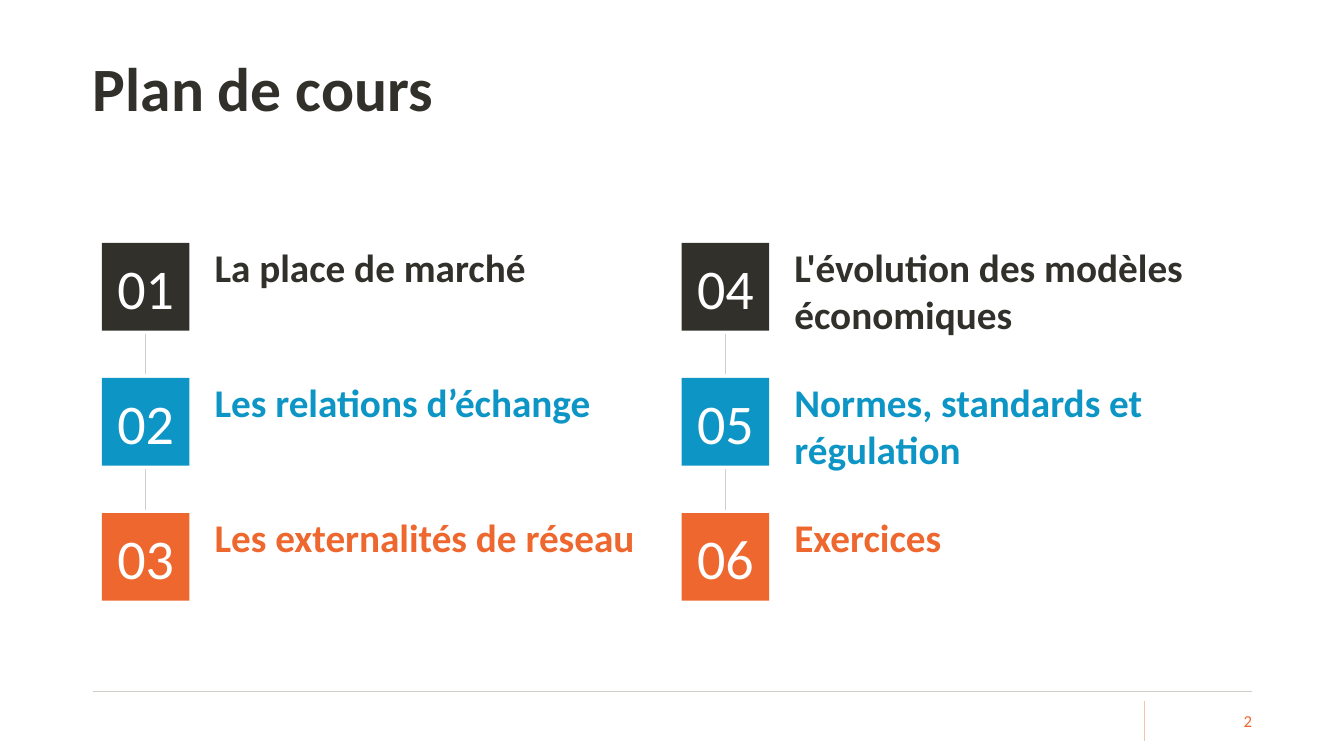
from lxml import etree
from pptx import Presentation
from pptx.dml.color import RGBColor
from pptx.enum.shapes import MSO_CONNECTOR, MSO_SHAPE
from pptx.enum.text import MSO_ANCHOR as Anchor, MSO_AUTO_SIZE as AutoSize, PP_ALIGN as Align
from pptx.oxml.ns import qn
from pptx.util import Inches, Pt

DARK = RGBColor(0x31, 0x30, 0x2B)
BLUE = RGBColor(0x0D, 0x96, 0xC5)
ORANGE = RGBColor(0xEE, 0x67, 0x2F)
WHITE = RGBColor(0xFF, 0xFF, 0xFF)
LINK_GREY = RGBColor(0xD0, 0xCE, 0xCE)
RULE_GREY = RGBColor(0xCE, 0xCD, 0xC7)
RULE_PEACH = RGBColor(0xF8, 0xC2, 0xAC)

ROW_COLOURS = [DARK, BLUE, ORANGE]
COLUMNS = [
    ["La place de marché", "Les relations d’échange", "Les externalités de réseau"],
    ["L'évolution des modèles économiques", "Normes, standards et régulation", "Exercices"],
]
COLUMN_LEFT, COLUMN_TOP = 1.01, 2.41
COLUMN_STEP, ROW_STEP = 5.75, 1.34
TILE = 0.87
LINK_GAP = 0.035
LABEL_OFFSET, LABEL_WIDTH, LABEL_LINE = 1.02, 4.61, 0.47


def write_text(shape, text, size, colour, bold=False, align=Align.LEFT,
               anchor=Anchor.TOP, margins=(0.1, 0.05, 0.1, 0.05), auto_size=AutoSize.NONE):
    """Fill a shape with one paragraph; margins are left, top, right, bottom in inches."""
    frame = shape.text_frame
    left, top, right, bottom = map(Inches, margins)
    frame_format = {
        "word_wrap": True, "auto_size": auto_size, "vertical_anchor": anchor,
        "margin_left": left, "margin_top": top,
        "margin_right": right, "margin_bottom": bottom,
    }
    for name, value in frame_format.items():
        setattr(frame, name, value)
    para = frame.paragraphs[0]
    para.alignment = align
    span = para.add_run()
    span.text = text
    for name, value in {"name": "Calibri", "size": Pt(size), "bold": bold}.items():
        setattr(span.font, name, value)
    span.font.color.rgb = colour
    return para


def add_line(slide, x1, y1, x2, y2, colour):
    line = slide.shapes.add_connector(MSO_CONNECTOR.STRAIGHT, *map(Inches, (x1, y1, x2, y2)))
    line.line.color.rgb = colour
    line.line.width = Pt(0.5)
    etree.SubElement(line._element.spPr, qn("a:effectLst"))


def add_title(slide, text, box):
    title = slide.shapes.title
    for name, value in zip(("left", "top", "width", "height"), box):
        setattr(title, name, Inches(value))
    para = write_text(title, text, 44, DARK, bold=True, anchor=Anchor.MIDDLE,
                      margins=(0, 0.05, 0.1, 0.05))
    para.line_spacing = 0.9


def add_topic(slide, left, top, number, text, colour):
    """Place a numbered tile with its label to the right."""
    label = slide.shapes.add_textbox(*map(Inches, (left + LABEL_OFFSET, top, LABEL_WIDTH, LABEL_LINE)))
    write_text(label, text, 28, colour, bold=True, margins=(0.1, 0, 0.1, 0),
               auto_size=AutoSize.SHAPE_TO_FIT_TEXT)
    tile = slide.shapes.add_shape(MSO_SHAPE.RECTANGLE, *map(Inches, (left, top, TILE, TILE)))
    tile.shadow.inherit = False
    tile.fill.solid()
    tile.fill.fore_color.rgb = colour
    tile.line.fill.background()
    write_text(tile, f"{number:02d}", 40, WHITE, align=Align.CENTER, anchor=Anchor.MIDDLE)


def add_column(slide, left, top, first_number, topics):
    centre = left + TILE / 2
    for row, (topic, colour) in enumerate(zip(topics, ROW_COLOURS)):
        row_top = top + row * ROW_STEP
        add_topic(slide, left, row_top, first_number + row, topic, colour)
        if row:
            add_line(slide, centre, row_top - ROW_STEP + TILE + LINK_GAP,
                     centre, row_top - LINK_GAP, LINK_GREY)


def add_footer(slide, left, top, right, page_number):
    add_line(slide, left, top, right, top, RULE_GREY)
    divider, number_top, height = right - 1.07, top + 0.09, 0.4
    add_line(slide, divider, number_top, divider, number_top + height, RULE_PEACH)
    box = slide.shapes.add_textbox(*map(Inches, (right - 0.95, number_top, 0.95, height)))
    write_text(box, str(page_number), 12, ORANGE, align=Align.RIGHT,
               anchor=Anchor.MIDDLE, margins=(0, 0.05, 0, 0.05))


def main():
    deck = Presentation()
    deck.slide_width, deck.slide_height = Inches(13.33), Inches(7.5)
    slide = deck.slides.add_slide(deck.slide_layouts[5])
    add_footer(slide, 0.92, 6.86, 12.42, 2)
    for index, topics in enumerate(COLUMNS):
        add_column(slide, COLUMN_LEFT + index * COLUMN_STEP, COLUMN_TOP,
                   1 + index * len(topics), topics)
    add_title(slide, "Plan de cours", (0.92, 0.18, 10.47, 1.45))
    deck.save("out.pptx")


if __name__ == "__main__":
    main()
